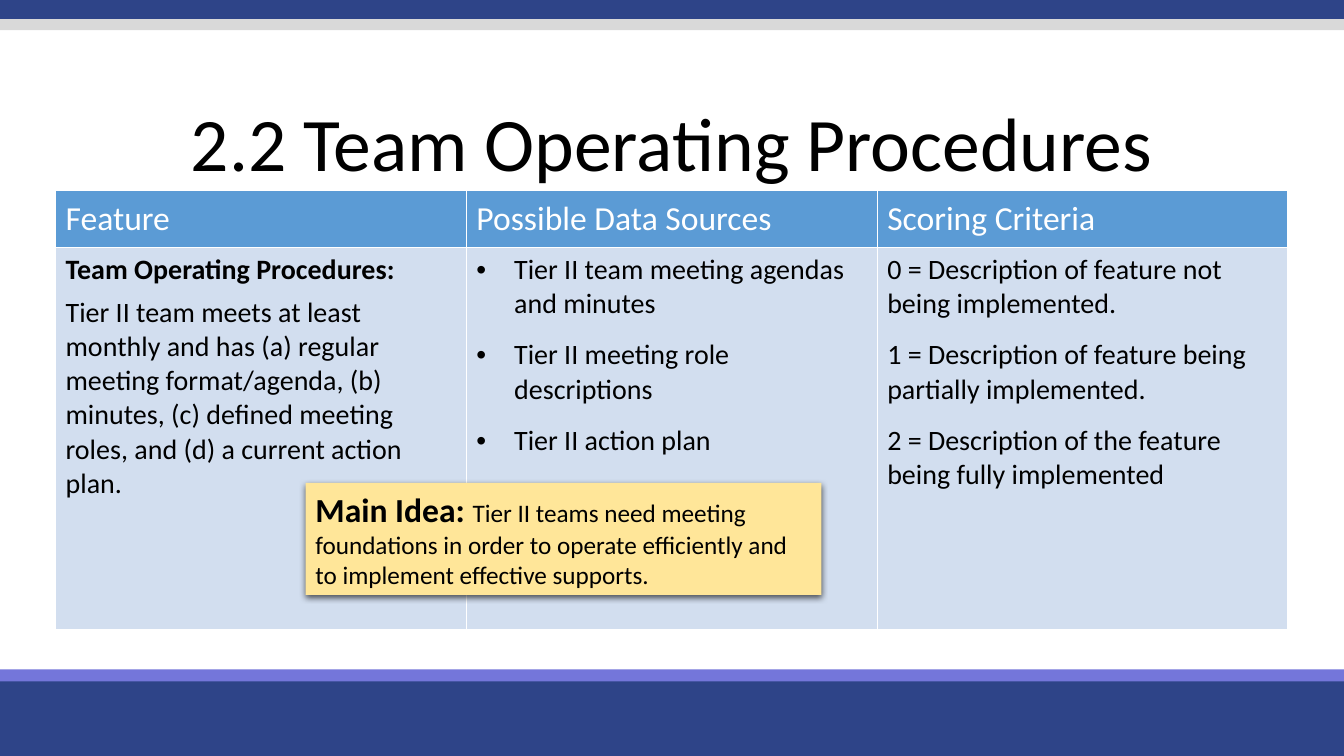
from pptx import Presentation
from pptx.dml.color import RGBColor as Rgb
from pptx.enum.shapes import MSO_SHAPE as Shape
from pptx.enum.text import MSO_ANCHOR as Anchor, PP_ALIGN as Align
from pptx.oxml import parse_xml
from pptx.oxml.ns import nsdecls
from pptx.util import Cm, Pt

# Content
FONT = "Calibri"
HUES = {"navy": "2E4488", "gray": "D9D9D9", "violet": "7476DA", "blue": "5B9BD5",
        "pale": "D2DEEF", "cream": "FFE699", "black": "000000", "white": "FFFFFF"}
WIDE, HIGH = 33.87, 19.05
TITLE = "2.2 Team Operating Procedures"
BANDS = [(0, 0.48, "navy"), (0.48, 0.28, "gray"),
         (17.02, 2.03, "navy"), (16.87, 0.3, "violet")]  # top, height, colour
# Each column: head, body lines, space after each line but the last, bullets
COLS = [
    ("Feature",
     ["Team Operating Procedures:",
      "Tier II team meets at least monthly and has (a) regular meeting "
      "format/agenda, (b) minutes, (c) defined meeting roles, and (d) a "
      "current action plan."], 6, False),
    ("Possible Data Sources",
     ["Tier II team meeting agendas and minutes",
      "Tier II meeting role descriptions",
      "Tier II action plan"], 12, True),
    ("Scoring Criteria",
     ["0 = Description of feature not being implemented.",
      "1 = Description of feature being partially implemented.",
      "2 = Description of the feature being fully implemented"], 12, False),
]
IDEA = [("Main Idea: ", 24, True),
        ("Tier II teams need meeting foundations in order to operate "
         "efficiently and to implement effective supports.", 18, False)]


def paint(run, size, hue="black", bold=False):
    font = run.font
    font.name, font.size, font.bold = FONT, Pt(size), bold
    font.color.rgb = Rgb.from_string(HUES[hue])


def add_box(left, top, width, height, hue):
    box = slide.shapes.add_shape(Shape.RECTANGLE, Cm(left), Cm(top), Cm(width), Cm(height))
    box.fill.solid()
    box.fill.fore_color.rgb = Rgb.from_string(HUES[hue])
    box.line.fill.background()
    box.shadow.inherit = False
    return box


def add_dot(par):
    props = par._p.get_or_add_pPr()
    props.set("marL", str(Cm(0.95)))
    props.set("indent", str(-Cm(0.95)))
    for tag in ('buFont {} typeface="Arial"', 'buChar {} char="•"'):
        props.append(parse_xml(f"<a:{tag.format(nsdecls('a'))}/>"))


def fill_cell(cell, lines, size, hue, back, gap=0, dots=False, lead=False):
    cell.fill.solid()
    cell.fill.fore_color.rgb = Rgb.from_string(HUES[back])
    props = cell._tc.get_or_add_tcPr()
    for i, side in enumerate("LRTB"):
        props.insert(i, parse_xml(
            f'<a:ln{side} {nsdecls("a")} w="{Pt(1)}"><a:solidFill>'
            f'<a:srgbClr val="{HUES["white"]}"/></a:solidFill></a:ln{side}>'))
    cell.text_frame.text = "\n".join(lines)
    for i, par in enumerate(cell.text_frame.paragraphs):
        if dots:
            add_dot(par)
        if i < len(lines) - 1:
            par.space_after = Pt(gap)
        paint(par.runs[0], size, hue, lead and i == 0)


deck = Presentation()
deck.slide_width, deck.slide_height = Cm(WIDE), Cm(HIGH)
slide = deck.slides.add_slide(deck.slide_layouts[6])

# Bands at top and foot
for top, height, hue in BANDS:
    add_box(0, top, WIDE, height, hue)

# Title
head = slide.shapes.add_textbox(Cm(3.66), Cm(2.16), Cm(26.54), Cm(3.07)).text_frame
head.word_wrap = True
head.vertical_anchor = Anchor.MIDDLE
head.text = TITLE
line = head.paragraphs[0]
line.alignment, line.line_spacing = Align.CENTER, 0.9
paint(line.runs[0], 54)

# Table
grid = slide.shapes.add_table(2, len(COLS), Cm(1.4), Cm(4.8), Cm(31.06), Cm(11.07)).table
grid.horz_banding = False
grid.rows[0].height, grid.rows[1].height = Cm(1.44), Cm(9.63)
for i, (name, lines, gap, dots) in enumerate(COLS):
    top = grid.cell(0, i)
    fill_cell(top, [name], 24, "white", "blue")
    top.vertical_anchor = Anchor.MIDDLE
    fill_cell(grid.cell(1, i), lines, 20, "black", "pale", gap, dots, lead=i == 0)

# Main idea note with soft shadow
note = add_box(7.7, 12.17, 13, 2.82, "cream")
note._element.spPr.find("{*}effectLst").append(parse_xml(
    f'<a:outerShdw {nsdecls("a")} blurRad="{Pt(4.5)}" dist="{Pt(1.5)}" dir="5400000" '
    f'algn="ctr" rotWithShape="0"><a:srgbClr val="{HUES["black"]}">'
    '<a:alpha val="63000"/></a:srgbClr></a:outerShdw>'))
frame = note.text_frame
frame.word_wrap = True
frame.vertical_anchor = Anchor.MIDDLE
line = frame.paragraphs[0]
line.alignment = Align.LEFT
for words, size, bold in IDEA:
    run = line.add_run()
    run.text = words
    paint(run, size, bold=bold)

deck.save("out.pptx")
